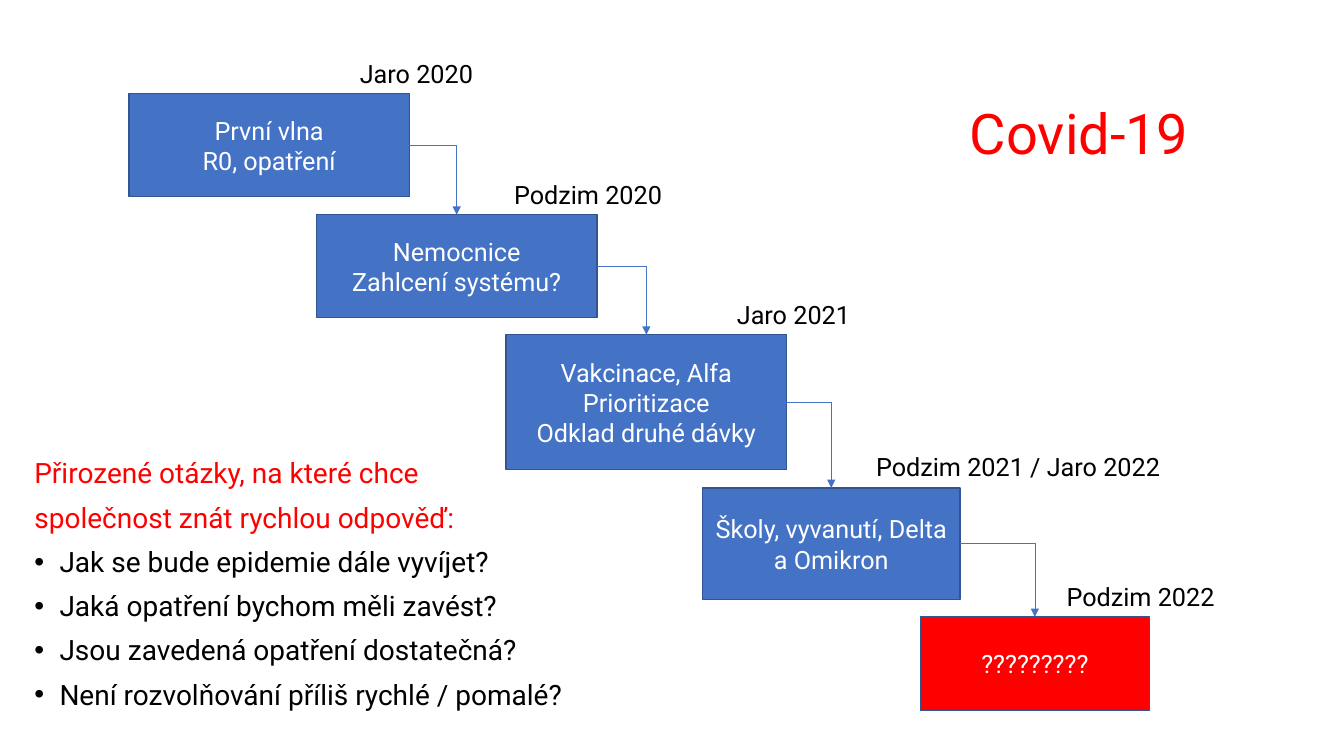
from lxml.etree import SubElement
from pptx import Presentation
from pptx.dml.color import RGBColor
from pptx.enum.shapes import MSO_CONNECTOR, MSO_SHAPE
from pptx.enum.text import MSO_ANCHOR, MSO_AUTO_SIZE, PP_ALIGN
from pptx.oxml.ns import qn
from pptx.util import Inches, Pt

HUES = {"blue": "4472C4", "edge": "325491", "red": "FF0000",
        "black": "000000", "white": "FFFFFF"}

# Box, fill, lines, then date label box and text
STEPS = [
    ((1.28, 0.93, 2.78, 1.02), "blue", ["První vlna", "R0, opatření"],
     (3.47, 0.53, 1.35, 0.4), "Jaro 2020"),
    ((3.14, 2.13, 2.78, 1.02), "blue", ["Nemocnice", "Zahlcení systému?"],
     (5, 1.73, 2.09, 0.4), "Podzim 2020"),
    ((5.02, 3.32, 2.78, 1.34), "blue",
     ["Vakcinace, Alfa", "Prioritizace", "Odklad druhé dávky"],
     (7.21, 2.92, 1.35, 0.4), "Jaro 2021"),
    ((6.97, 4.84, 2.55, 1.11), "blue", ["Školy, vyvanutí, Delta a Omikron"],
     (8.59, 4.43, 3.22, 0.4), "Podzim 2021 / Jaro 2022"),
    ((9.13, 6.12, 2.27, 0.93), "red", ["?????????"],
     (10.48, 5.72, 2.02, 0.4), "Podzim 2022"),
]
LEAD = ["Přirozené otázky, na které chce", "společnost znát rychlou odpověď:"]
ASKS = ["Jak se bude epidemie dále vyvíjet?",
        "Jaká opatření bychom měli zavést?",
        "Jsou zavedená opatření dostatečná?",
        "Není rozvolňování příliš rychlé / pomalé?"]


def tint(name):
    return RGBColor.from_string(HUES[name])


def apply(item, form):
    for key, val in form.items():
        setattr(item, key, val)


def place(shape, box):
    sides = ("left", "top", "width", "height")
    apply(shape, dict(zip(sides, map(Inches, box))))


def write(shape, lines, size, hue, align=PP_ALIGN.LEFT, anchor=MSO_ANCHOR.TOP):
    frame = shape.text_frame
    frame.text = "\n".join(lines)
    apply(frame, {"word_wrap": True, "auto_size": MSO_AUTO_SIZE.NONE,
                  "vertical_anchor": anchor})
    for para in frame.paragraphs:
        para.alignment = align
        font = para.runs[0].font
        apply(font, {"name": "Roboto", "size": Pt(size)})
        font.color.rgb = tint(hue)
    return frame.paragraphs


def add_title(slide, box):
    place(slide.shapes.title, box)
    write(slide.shapes.title, ["Covid-19"], 40, "red")


def add_list(slide, box):
    body = slide.placeholders[1]
    place(body, box)
    paras = write(body, LEAD + ASKS, 20, "black")
    for num, para in enumerate(paras):
        apply(para, {"line_spacing": 0.9, "space_before": Pt(10)})
        props = para._p.get_or_add_pPr()
        lead = num < len(LEAD)
        dent = 0 if lead else Inches(0.25)
        props.set("marL", str(dent))
        props.set("indent", str(-dent))
        if lead:
            para.runs[0].font.color.rgb = tint("red")
            SubElement(props, qn("a:buNone"))
        else:
            SubElement(props, qn("a:buFont")).set("typeface", "Arial")
            SubElement(props, qn("a:buChar")).set("char", "•")


def add_step(slide, box, fill, lines, spot, date):
    rect = slide.shapes.add_shape(MSO_SHAPE.RECTANGLE, *map(Inches, box))
    rect.shadow.inherit = False
    rect.fill.solid()
    rect.fill.fore_color.rgb = tint(fill)
    rect.line.color.rgb = tint("edge")
    rect.line.width = Pt(1)
    write(rect, lines, 18, "white", PP_ALIGN.CENTER, MSO_ANCHOR.MIDDLE)
    label = slide.shapes.add_textbox(*map(Inches, spot))
    write(label, [date], 18, "black")
    return rect


def add_link(slide, start, end):
    link = slide.shapes.add_connector(MSO_CONNECTOR.ELBOW, 0, 0, 0, 0)
    link.begin_connect(start, 3)
    link.end_connect(end, 0)
    link.line.color.rgb = tint("blue")
    link.line.width = Pt(0.5)
    # One bend, arrowhead, no shadow
    props = link._element.spPr
    props.find(qn("a:prstGeom")).set("prst", "bentConnector2")
    SubElement(props.find(qn("a:ln")), qn("a:tailEnd")).set("type", "triangle")
    SubElement(props, qn("a:effectLst"))


def main():
    deck = Presentation()
    deck.slide_width, deck.slide_height = Inches(13.33), Inches(7.5)
    slide = deck.slides.add_slide(deck.slide_layouts[1])
    add_title(slide, (9.52, 0.93, 2.67, 0.77))
    add_list(slide, (0.24, 4.51, 7.69, 2.68))
    # Staircase of waves
    rects = [add_step(slide, *step) for step in STEPS]
    for start, end in zip(rects, rects[1:]):
        add_link(slide, start, end)
    deck.save("out.pptx")


if __name__ == "__main__":
    main()
